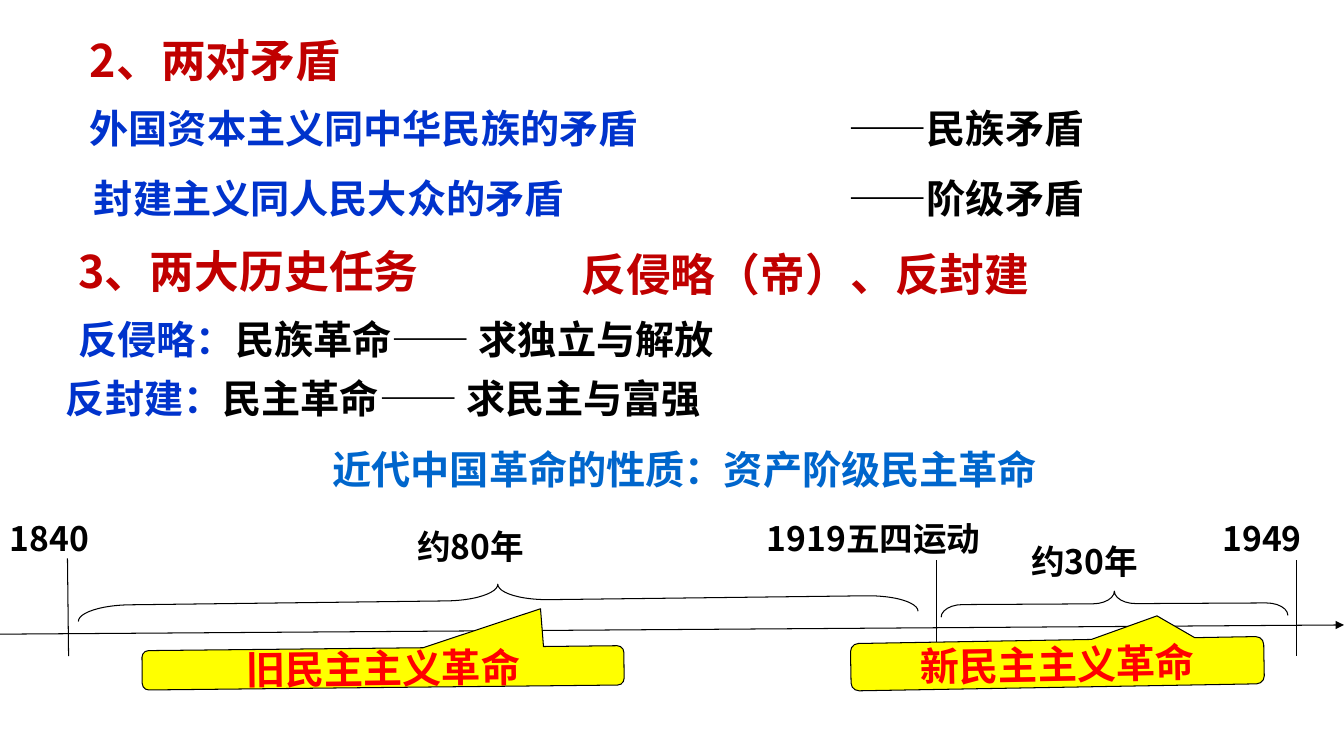
import pptx
import pptx.util
import pptx.dml.color
import pptx.enum.shapes
import pptx.enum.text
import pptx.oxml.ns
import lxml.etree

Pt = pptx.util.Pt
Shape = pptx.enum.shapes.MSO_SHAPE
Align = pptx.enum.text.PP_ALIGN
Anchor = pptx.enum.text.MSO_ANCHOR
qn = pptx.oxml.ns.qn

FONT = "Noto Sans CJK SC"
COLORS = {
    "heading": "C00000", "topic": "0033CC", "body": "000000", "dash": "0D0D0D",
    "nature": "0066CC", "callout": "FFFF00", "callout_text": "FF0000",
}


def color(name):
    return pptx.dml.color.RGBColor.from_string(COLORS[name])


def add_spans(para, size, spans):
    """Add bold runs given as (text, color name) pairs."""
    for text, tone in spans:
        span = para.add_run()
        span.text = text
        span.font.size = Pt(size)
        span.font.bold = True
        span.font.name = FONT
        span.font.color.rgb = color(tone)
        east_asian = lxml.etree.SubElement(span.font._element, qn("a:ea"))
        east_asian.set("typeface", FONT)


def add_text(page, left, top, width, height, size, *spans):
    box = page.shapes.add_textbox(Pt(left), Pt(top), Pt(width), Pt(height))
    box.text_frame.word_wrap = True
    add_spans(box.text_frame.paragraphs[0], size, spans)
    return box


def add_line(page, start, end, arrow=False):
    line = page.shapes.add_connector(
        pptx.enum.shapes.MSO_CONNECTOR.STRAIGHT, *map(Pt, start + end))
    line.line.color.rgb = color("body")
    line.line.width = Pt(0.75)
    if arrow:
        tail = lxml.etree.SubElement(line.line._get_or_add_ln(), qn("a:tailEnd"))
        tail.set("type", "triangle")
    lxml.etree.SubElement(line._element.spPr, qn("a:effectLst"))


def add_outlined(page, preset, box, rotation, adjustments):
    shape = page.shapes.add_shape(preset, *map(Pt, box))
    shape.shadow.inherit = False
    shape.rotation = rotation
    for index, value in enumerate(adjustments):
        shape.adjustments[index] = value
    shape.fill.background()
    shape.line.color.rgb = color("body")
    shape.line.width = Pt(0.75)
    return shape


def add_title(page, left, top, width, height):
    title = page.shapes.title
    title.left, title.top, title.width, title.height = map(Pt, (left, top, width, height))
    frame = title.text_frame
    frame.auto_size = pptx.enum.text.MSO_AUTO_SIZE.NONE
    frame.vertical_anchor = Anchor.MIDDLE
    para = frame.paragraphs[0]
    para.alignment = Align.LEFT
    para.line_spacing = 0.9
    add_spans(para, 32, [("2、两对矛盾", "heading")])


def add_contradictions(page, left, top):
    rows = [("外国资本主义同中华民族的矛盾", "——民族矛盾", 0),
            ("封建主义同人民大众的矛盾", "——阶级矛盾", 3)]
    for index, (conflict, kind, indent) in enumerate(rows):
        row_top = top + index * 49.7
        add_text(page, left + indent, row_top, 510, 41, 28, (conflict, "topic"))
        add_text(page, left + 542, row_top, 290, 41, 28, (kind, "body"))


def add_tasks(page, left, top):
    # Headings
    add_text(page, left, top, 352, 46, 32, ("3、两大历史任务", "heading"))
    add_text(page, left + 359.2, top + 2.2, 352, 46, 32,
             ("反侵略（帝）、反封建", "heading"))
    # Task and aim of each revolution
    rows = [(0, 51.2, "反侵略：", "民族革命", "求独立与解放"),
            (-9, 93.6, "反封建：", "民主革命", "求民主与富强")]
    for shift, drop, task, revolution, aim in rows:
        add_text(page, left + shift, top + drop, 649, 41, 28, (task, "topic"),
                 (revolution, "body"), ("—— ", "dash"), (aim, "body"))


def add_nature(page, left, top, width, height):
    box = add_text(page, left, top, width, height, 28,
                   ("近代中国革命的性质：资产阶级民主革命", "nature"))
    frame = box.text_frame
    frame.word_wrap = False
    frame.margin_left = frame.margin_right = frame.margin_top = frame.margin_bottom = 0
    frame.paragraphs[0].alignment = Align.CENTER


def add_timeline(page, left, top, width):
    # Axis and year ticks
    add_line(page, (left, top + 93), (left + width, top + 86.4), arrow=True)
    ticks = [(48.2, 38.9, 49, 108.7), (668.9, 40.3, 668.9, 103),
             (925.9, 40.3, 925.9, 108.7)]
    for start_x, start_y, end_x, end_y in ticks:
        add_line(page, (left + start_x, top + start_y), (left + end_x, top + end_y))

    # Years and spans
    labels = [("1840", 0, 6.5, 136), ("1919五四运动", 540.7, 6.5, 239),
              ("1949", 866.2, 6.5, 94), ("约80年", 290.9, 12.2, 168),
              ("约30年", 729.4, 23, 137.5)]
    for text, shift, drop, label_width in labels:
        add_text(page, left + shift, top + drop, label_width, 36, 24, (text, "body"))

    # Braces, turned to point up
    braces = [(344.2, -231.1, 23, 599.8, 89.3, 1.61),
              (787, -52.6, 18, 247.7, 89.7, 0.86)]
    for shift, drop, thick, length, rotation, curve in braces:
        add_outlined(page, Shape.LEFT_BRACE, (left + shift, top + drop, thick, length),
                     rotation, (curve, 0.5))

    # Callouts naming the two periods
    callouts = [("旧民主主义革命", 101.5, 103, 344.2, 28.1, -0.6, (0.328, -1.461)),
                ("新民主主义革命", 607.7, 97.2, 295.2, 33.8, -1, (0.243, -0.974))]
    for text, shift, drop, box_width, height, rotation, tip in callouts:
        callout = add_outlined(page, Shape.ROUNDED_RECTANGULAR_CALLOUT,
                               (left + shift, top + drop, box_width, height),
                               rotation, tip + (0.167,))
        callout.fill.solid()
        callout.fill.fore_color.rgb = color("callout")
        frame = callout.text_frame
        frame.word_wrap = False
        frame.vertical_anchor = Anchor.MIDDLE
        frame.paragraphs[0].alignment = Align.CENTER
        add_spans(frame.paragraphs[0], 28, [(text, "callout_text")])


def main():
    deck = pptx.Presentation()
    deck.slide_width, deck.slide_height = Pt(960), Pt(540)
    page = deck.slides.add_slide(deck.slide_layouts.get_by_name("Title Only"))
    add_timeline(page, 0, 360, 960)
    add_title(page, 57, 0, 816, 90)
    add_contradictions(page, 57, 71.3)
    add_tasks(page, 49, 170.6)
    add_nature(page, 185, 318.2, 608.4, 33.8)
    deck.save("out.pptx")


if __name__ == "__main__":
    main()
